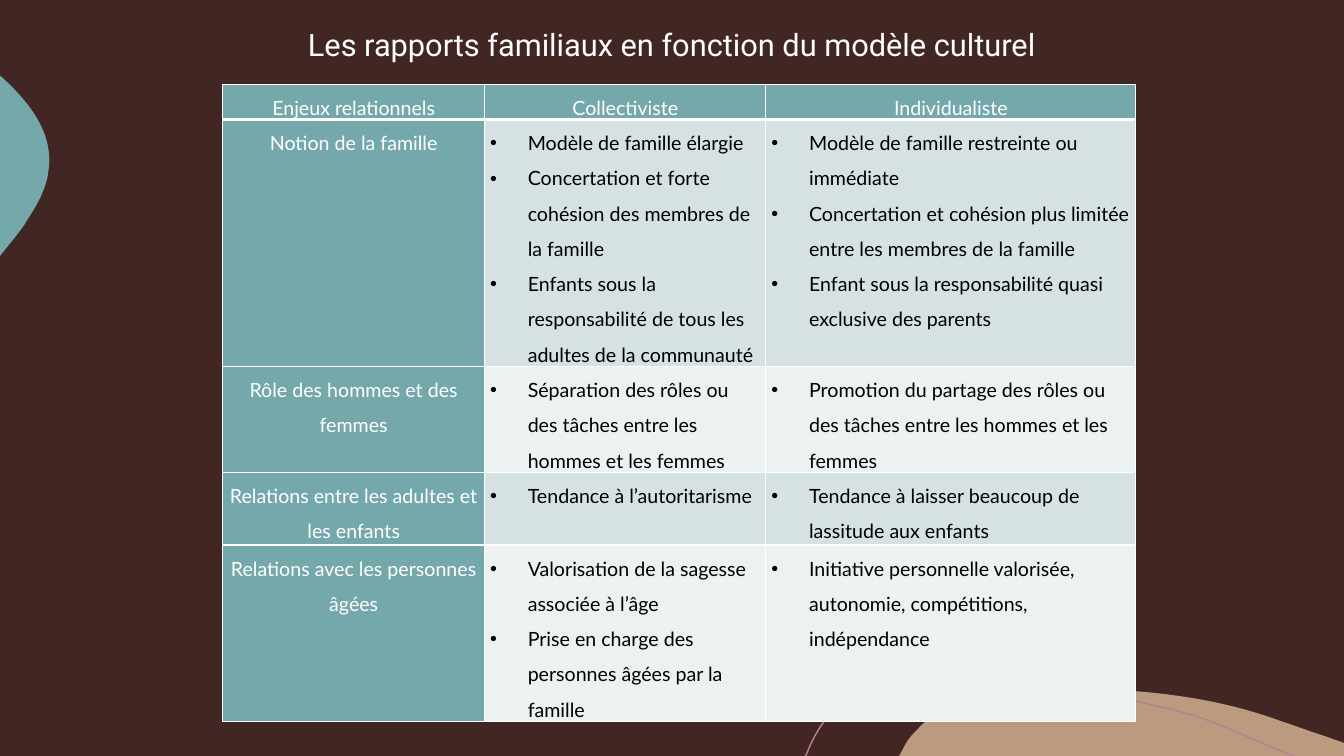
from lxml.etree import SubElement
from pptx import Presentation
from pptx.dml.color import RGBColor
from pptx.enum.text import MSO_ANCHOR as Anchor, PP_ALIGN as Align
from pptx.oxml.ns import qn
from pptx.util import Cm, Pt

COLORS = {"brown": "412624", "sand": "BA9B7F", "teal": "75A8AB", "pink": "BA7F94",
          "white": "FFFFFF", "black": "000000", "mist": "D6E1E2", "pale": "ECF1F1"}
TITLE = "Les rapports familiaux en fonction du modèle culturel"
HEADERS = ["Enjeux relationnels", "Collectiviste", "Individualiste"]
ROWS = [
    ("Notion de la famille",
     ["Modèle de famille élargie",
      "Concertation et forte cohésion des membres de la famille",
      "Enfants sous la responsabilité de tous les adultes de la communauté"],
     ["Modèle de famille restreinte ou immédiate",
      "Concertation et cohésion plus limitée entre les membres de la famille",
      "Enfant sous la responsabilité quasi exclusive des parents"]),
    ("Rôle des hommes et des femmes",
     ["Séparation des rôles ou des tâches entre les hommes et les femmes"],
     ["Promotion du partage des rôles ou des tâches entre les hommes et les femmes"]),
    ("Relations entre les adultes et les enfants",
     ["Tendance à l’autoritarisme"],
     ["Tendance à laisser beaucoup de lassitude aux enfants"]),
    ("Relations avec les personnes âgées",
     ["Valorisation de la sagesse associée à l’âge",
      "Prise en charge des personnes âgées par la famille"],
     ["Initiative personnelle valorisée, autonomie, compétitions, indépendance"]),
]
COLUMN_WIDTHS = [6.6, 7.09, 9.32]
ROW_HEIGHTS = [0.64, 5.46, 2.44, 1.83, 3.66]
SAND_HILL = [
    (26.77, 17.35),
    [(28.65, 17.35), (30.58, 17.53), (32.33, 18.19)],
    [(32.66, 18.29), (32.97, 18.42), (33.3, 18.52)],
    (33.87, 18.72), (33.87, 19.05), (22.66, 19.05), (22.81, 18.77),
    [(22.91, 18.59), (23.01, 18.49), (23.14, 18.36)],
    [(23.85, 17.6), (24.94, 17.37), (25.98, 17.35)],
    [(26.24, 17.35), (26.52, 17.35), (26.77, 17.35)],
]
TEAL_BULGE = [
    (0, 1.91), (0.03, 1.93),
    [(0.76, 2.59), (1.37, 3.38), (1.22, 4.32)],
    [(1.17, 4.75), (0.94, 5.16), (0.69, 5.54)],
    [(0.61, 5.69), (0.43, 5.92), (0.2, 6.2)],
    (0, 6.45),
]
PINK_ARC = [
    (20.29, 19.05), (20.32, 19.02),
    [(20.47, 18.62), (20.68, 18.26), (20.93, 17.98)],
    [(21.59, 17.3), (22.58, 17.09), (23.52, 17.07)],
    (24.26, 17.07),
    [(25.96, 17.07), (27.94, 17.53), (29.34, 17.83)],
    [(30.71, 18.16), (31.14, 18.47), (32.59, 19.05)],
]


def color(name):
    """Return the named colour."""
    return RGBColor.from_string(COLORS[name])


def bend(blob, outline):
    """Turn the straight segments that stand for curves into Béziers."""
    segments = list(blob._element.iter(qn("a:lnTo")))
    for segment, part in zip(segments, outline[1:]):
        if isinstance(part, list):
            segment.tag = qn("a:cubicBezTo")
            for child in list(segment):
                segment.remove(child)
            for x, y in part:
                SubElement(segment, qn("a:pt"), x=str(Cm(x) - blob.left),
                           y=str(Cm(y) - blob.top))


def add_blob(page, outline, fill=None, line=None):
    """Draw a curved outline, filled and closed or as an open line."""
    ends = [part[-1] if isinstance(part, list) else part for part in outline]
    start, *others = [(Cm(x), Cm(y)) for x, y in ends]
    builder = page.shapes.build_freeform(*start, scale=1.0)
    builder.add_line_segments(others, close=fill is not None)
    blob = builder.convert_to_shape()
    bend(blob, outline)
    blob.shadow.inherit = False
    if fill:
        blob.fill.solid()
        blob.fill.fore_color.rgb = color(fill)
        blob.line.fill.background()
    else:
        blob.fill.background()
        blob.line.color.rgb = color(line)
        blob.line.width = Pt(1)


def style_font(para, name, size, tint):
    """Set the font of a paragraph."""
    para.font.name, para.font.size, para.font.bold = name, Pt(size), False
    para.font.color.rgb = color(tint)


def add_title(page):
    """Add the centred title."""
    box = page.shapes.add_textbox(Cm(2.11), Cm(-0.43), Cm(29.64), Cm(4.24))
    frame = box.text_frame
    frame.word_wrap = True
    frame.vertical_anchor = Anchor.MIDDLE
    frame.margin_bottom = Cm(1.16)
    para = frame.paragraphs[0]
    para.text = TITLE
    para.alignment = Align.CENTER
    para.line_spacing = 0.9
    style_font(para, "Roboto", 22, "white")


def add_bullet(para):
    """Give a paragraph a hanging bullet."""
    properties = para._p.get_or_add_pPr()
    properties.set("marL", str(Cm(0.95)))
    properties.set("indent", str(-Cm(0.95)))
    SubElement(properties, qn("a:buFont"), typeface="Arial")
    SubElement(properties, qn("a:buChar"), char="•")


def add_borders(cell):
    """Give a header cell white borders with a thick one below."""
    properties = cell._tc.get_or_add_tcPr()
    for side, width in (("lnL", 1), ("lnR", 1), ("lnT", 1), ("lnB", 3)):
        border = SubElement(properties, qn(f"a:{side}"), w=str(Pt(width)))
        paint = SubElement(border, qn("a:solidFill"))
        SubElement(paint, qn("a:srgbClr"), val=COLORS["white"])


def fill_cell(cell, lines, fill, bulleted=False):
    """Write and colour one table cell."""
    cell.margin_left, cell.margin_right = Cm(0.14), Cm(0.13)
    cell.margin_top = cell.margin_bottom = 0
    frame = cell.text_frame
    for index, line in enumerate(lines):
        para = frame.add_paragraph() if index else frame.paragraphs[0]
        para.text = line
        para.line_spacing = 1.5
        para.alignment = Align.LEFT if bulleted else Align.CENTER
        style_font(para, "Lato", 14, "black" if bulleted else "white")
        if bulleted:
            add_bullet(para)
    cell.fill.solid()
    cell.fill.fore_color.rgb = color(fill)


def add_comparison(page):
    """Add the table comparing the two cultural models."""
    holder = page.shapes.add_table(
        len(ROW_HEIGHTS), len(COLUMN_WIDTHS), Cm(5.61), Cm(2.12),
        Cm(sum(COLUMN_WIDTHS)), Cm(sum(ROW_HEIGHTS)))
    table = holder.table
    table.first_col = True
    for column, width in zip(table.columns, COLUMN_WIDTHS):
        column.width = Cm(width)
    for row, height in zip(table.rows, ROW_HEIGHTS):
        row.height = Cm(height)
    holder.height = Cm(16.54)
    for index, header in enumerate(HEADERS):
        add_borders(table.cell(0, index))
        fill_cell(table.cell(0, index), [header], "teal")
    for number, (topic, *models) in enumerate(ROWS, 1):
        fill_cell(table.cell(number, 0), [topic], "teal")
        for index, lines in enumerate(models, 1):
            fill_cell(table.cell(number, index), lines, "mist" if number % 2 else "pale", True)


def main():
    """Build the slide and save it."""
    deck = Presentation()
    deck.slide_width, deck.slide_height = Cm(33.87), Cm(19.05)
    page = deck.slides.add_slide(deck.slide_layouts[6])
    page.background.fill.solid()
    page.background.fill.fore_color.rgb = color("brown")
    add_blob(page, SAND_HILL, fill="sand")
    add_blob(page, TEAL_BULGE, fill="teal")
    add_blob(page, PINK_ARC, line="pink")
    add_title(page)
    add_comparison(page)
    deck.save("out.pptx")


if __name__ == "__main__":
    main()
